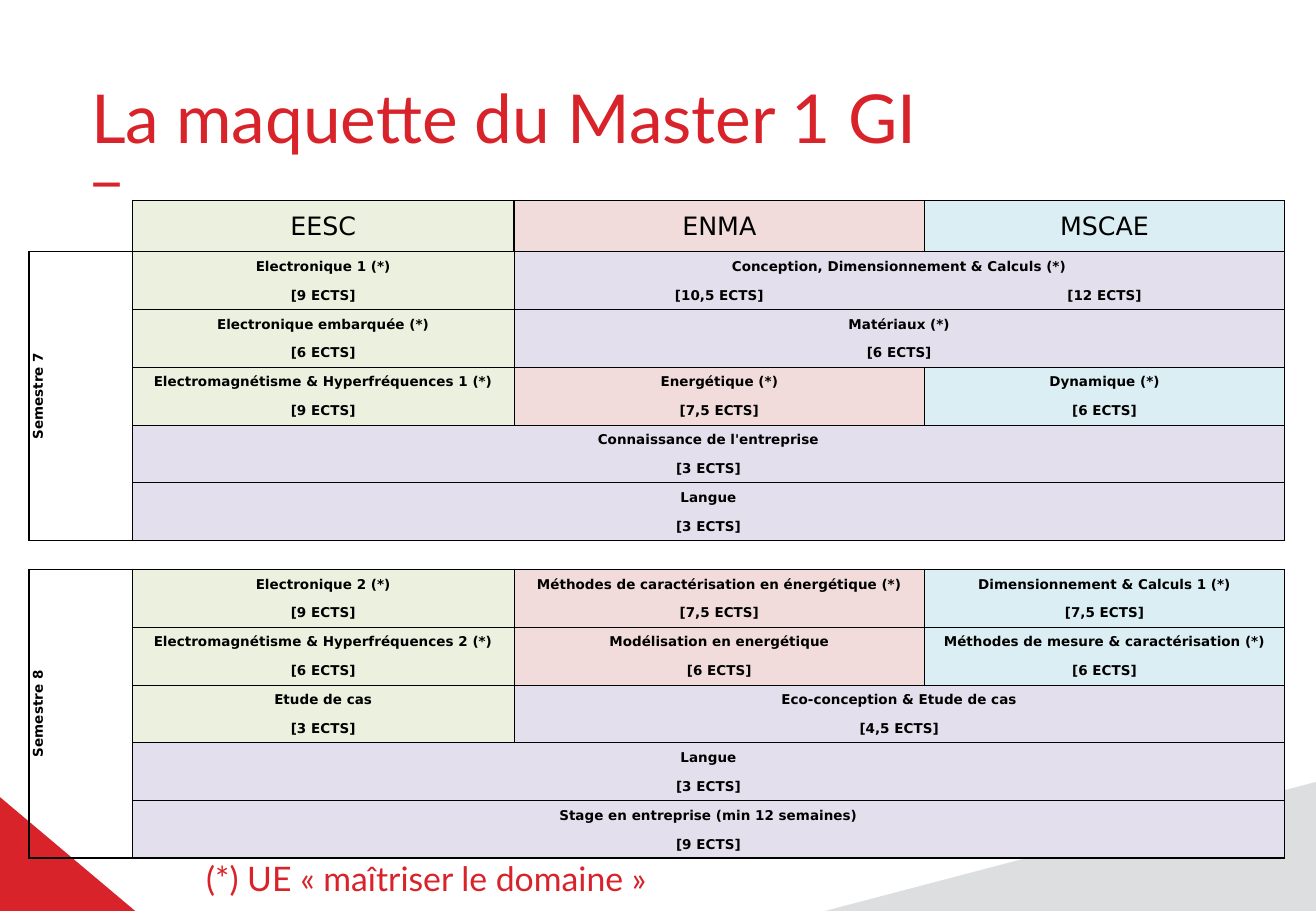
from dataclasses import dataclass

from lxml.etree import SubElement
from pptx import Presentation
from pptx.dml.color import RGBColor
from pptx.enum.text import MSO_ANCHOR as Anchor, PP_ALIGN as Align
from pptx.oxml.ns import qn
from pptx.util import Inches, Pt


@dataclass(frozen=True)
class Theme:
    red: str = "D8232A"
    grey: str = "DCDEE0"
    ink: str = "000000"
    shared: str = "E4DFEC"
    tracks: tuple = ("EBF1DE", "F2DCDB", "DAEEF3")
    title_font: str = "Lato"
    table_font: str = "DejaVu Sans"
    title_size: int = 40
    note_size: int = 20
    header_size: int = 15
    cell_size: int = 8


THEME = Theme()
NO_STYLE = "{2D5ABB26-0587-4C30-8999-92F81FD0307C}"
TRACKS = ("EESC", "ENMA", "MSCAE")
COLUMN_WIDTHS = (0.85, 3.14, 3.38, 2.96)
HEADER_ROWS, BODY_ROWS = 2, 21
ROW_HEIGHTS = [0.17, 0.18] + [5 / BODY_ROWS] * BODY_ROWS
# Boundaries that carry the heavier line
STRONG_ROWS = (0, HEADER_ROWS, 12, 13, len(ROW_HEIGHTS))
STRONG_COLUMNS = (0, 1, len(COLUMN_WIDTHS))

# Each level holds courses: name, number of tracks covered, credits
SEMESTERS = {
    "Semestre 7": [
        [("Electronique 1 (*)", 1, ["9"]),
         ("Conception, Dimensionnement & Calculs (*)", 2, ["10,5", "12"])],
        [("Electronique embarquée (*)", 1, ["6"]), ("Matériaux (*)", 2, ["6"])],
        [("Electromagnétisme & Hyperfréquences 1 (*)", 1, ["9"]),
         ("Energétique (*)", 1, ["7,5"]), ("Dynamique (*)", 1, ["6"])],
        [("Connaissance de l'entreprise", 3, ["3"])],
        [("Langue", 3, ["3"])],
    ],
    "Semestre 8": [
        [("Electronique 2 (*)", 1, ["9"]),
         ("Méthodes de caractérisation en énergétique (*)", 1, ["7,5"]),
         ("Dimensionnement & Calculs 1 (*)", 1, ["7,5"])],
        [("Electromagnétisme & Hyperfréquences 2 (*)", 1, ["6"]),
         ("Modélisation en energétique", 1, ["6"]),
         ("Méthodes de mesure & caractérisation (*)", 1, ["6"])],
        [("Etude de cas", 1, ["3"]), ("Eco-conception & Etude de cas", 2, ["4,5"])],
        [("Langue", 3, ["3"])],
        [("Stage en entreprise (min 12 semaines)", 3, ["9"])],
    ],
}


def apply(target, values):
    for name, value in values.items():
        setattr(target, name, value)


def margins(left, top, right, bottom):
    return {"margin_left": Inches(left), "margin_top": Inches(top),
            "margin_right": Inches(right), "margin_bottom": Inches(bottom)}


def write(para, text, font, size, color, align, bold=False):
    para.alignment = align
    span = para.add_run()
    span.text = text
    apply(span.font, {"name": font, "size": Pt(size), "bold": bold})
    span.font.color.rgb = RGBColor.from_string(color)


def add_corner(page, corners, color):
    points = [(Inches(x), Inches(y)) for x, y in corners]
    builder = page.shapes.build_freeform(*points[0])
    builder.add_line_segments(points[1:], close=True)
    shape = builder.convert_to_shape()
    shape.shadow.inherit = False
    shape.fill.solid()
    shape.fill.fore_color.rgb = RGBColor.from_string(color)
    shape.line.fill.background()


def add_title(page, text):
    title = page.shapes.title
    apply(title, {"left": Inches(0.72), "top": Inches(0.6),
                  "width": Inches(10.11), "height": Inches(1.09)})
    frame = title.text_frame
    apply(frame, {"vertical_anchor": Anchor.TOP, "word_wrap": True,
                  **margins(0.03, 0.03, 0.03, 0.03)})
    style = (THEME.title_font, THEME.title_size, THEME.red, Align.LEFT)
    write(frame.paragraphs[0], text, *style)
    dash = frame.add_paragraph()
    dash.line_spacing = Pt(19.9)
    write(dash, "_", *style)


def add_note(page, text):
    box = page.shapes.add_textbox(Inches(1.5), Inches(7), Inches(4.02), Inches(0.45))
    frame = box.text_frame
    apply(frame, {"vertical_anchor": Anchor.MIDDLE, "word_wrap": False,
                  **margins(0.06, 0.06, 0.06, 0.06)})
    write(frame.paragraphs[0], text, THEME.title_font, THEME.note_size,
          THEME.red, Align.CENTER)


def add_border(cell, side, width):
    """Draw one side of a cell; a width of 0 leaves the side open."""
    line = SubElement(cell._tc.get_or_add_tcPr(), qn(f"a:ln{side}"), w=str(Pt(width)))
    if width:
        fill = SubElement(line, qn("a:solidFill"))
        SubElement(fill, qn("a:srgbClr"), val=THEME.ink)
    else:
        SubElement(line, qn("a:noFill"))


def frame_cells(table, top, left, rows, columns, color, open_sides):
    """Border and fill a merged block; its first cell carries all four sides."""
    bottom, right = top + rows, left + columns
    header = top < HEADER_ROWS
    strong = {"L": header or left in STRONG_COLUMNS, "R": header or right in STRONG_COLUMNS,
              "T": top in STRONG_ROWS, "B": bottom in STRONG_ROWS}
    for row in range(top, bottom):
        for column in range(left, right):
            cell = table.cell(row, column)
            outside = {"L": column == left, "R": column + 1 == right,
                       "T": row == top, "B": row + 1 == bottom}
            for side, is_outside in outside.items():
                if is_outside or (row, column) == (top, left):
                    width = 1 if strong[side] else 0.5
                    add_border(cell, side, 0 if side in open_sides else width)
            if color:
                cell.fill.solid()
                cell.fill.fore_color.rgb = RGBColor.from_string(color)


def fill_cell(table, row, column, text, rows=1, columns=1, color=None,
              open_sides="", size=THEME.cell_size, bold=True):
    cell = table.cell(row, column)
    if rows * columns > 1:
        cell.merge(table.cell(row + rows - 1, column + columns - 1))
    frame_cells(table, row, column, rows, columns, color, open_sides)
    apply(cell, {"vertical_anchor": Anchor.MIDDLE, **margins(0.01, 0.01, 0.01, 0)})
    write(cell.text_frame.paragraphs[0], text, THEME.table_font, size,
          THEME.ink, Align.CENTER, bold)
    return cell


def add_course(table, row, column, name, columns, credits):
    color = THEME.tracks[column - 1] if columns == 1 else THEME.shared
    fill_cell(table, row, column, name, columns=columns, color=color, open_sides="B")
    width = columns // len(credits)
    for index, credit in enumerate(credits):
        open_sides = "T" + "L" * (index > 0) + "R" * (index + 1 < len(credits))
        fill_cell(table, row + 1, column + index * width, f"[{credit} ECTS]",
                  columns=width, color=color, open_sides=open_sides)


def shrink_empty_cells(table):
    for row in table.rows:
        for cell in row.cells:
            if not cell.text_frame.text:
                apply(cell, margins(0.01, 0.01, 0.01, 0))
                para = cell.text_frame.paragraphs[0]
                SubElement(para._p, qn("a:endParaRPr"), sz=str(THEME.cell_size * 100))


def add_curriculum(page):
    table = page.shapes.add_table(
        len(ROW_HEIGHTS), len(COLUMN_WIDTHS), Inches(0.24), Inches(1.65),
        Inches(sum(COLUMN_WIDTHS)), Inches(sum(ROW_HEIGHTS))).table
    apply(table, {"first_row": False, "horz_banding": False})
    table._tbl.tblPr.find(qn("a:tableStyleId")).text = NO_STYLE
    for column, width in zip(table.columns, COLUMN_WIDTHS):
        column.width = Inches(width)
    for row, height in zip(table.rows, ROW_HEIGHTS):
        row.height = Inches(height)

    # Track headings
    for column, (track, color) in enumerate(zip(TRACKS, THEME.tracks), 1):
        fill_cell(table, 0, column, track, rows=HEADER_ROWS, color=color,
                  size=THEME.header_size, bold=False)

    # Semesters, with one free row between them
    top = HEADER_ROWS
    for semester, levels in SEMESTERS.items():
        height = 2 * len(levels)
        label = fill_cell(table, top, 0, semester, rows=height)
        label._tc.get_or_add_tcPr().set("vert", "vert270")
        for level, courses in enumerate(levels):
            column = 1
            for name, columns, credits in courses:
                add_course(table, top + 2 * level, column, name, columns, credits)
                column += columns
        top += height + 1
    shrink_empty_cells(table)


def main():
    deck = Presentation()
    apply(deck, {"slide_width": Inches(10.83), "slide_height": Inches(7.5)})
    page = deck.slides.add_slide(deck.slide_layouts[5])

    # Corner decoration, bleeding over the slide edges
    add_corner(page, [(-9.72, 7.54), (1.16, 7.54), (-7.79, 0), (-9.74, 0)], THEME.red)
    add_corner(page, [(13.9, 5.63), (2.34, 8.67), (2.3, 9.71), (13.92, 9.71)], THEME.grey)

    # Content
    add_title(page, "La maquette du Master 1 GI")
    add_curriculum(page)
    add_note(page, "(*) UE « maîtriser le domaine »")
    deck.save("out.pptx")


if __name__ == "__main__":
    main()
